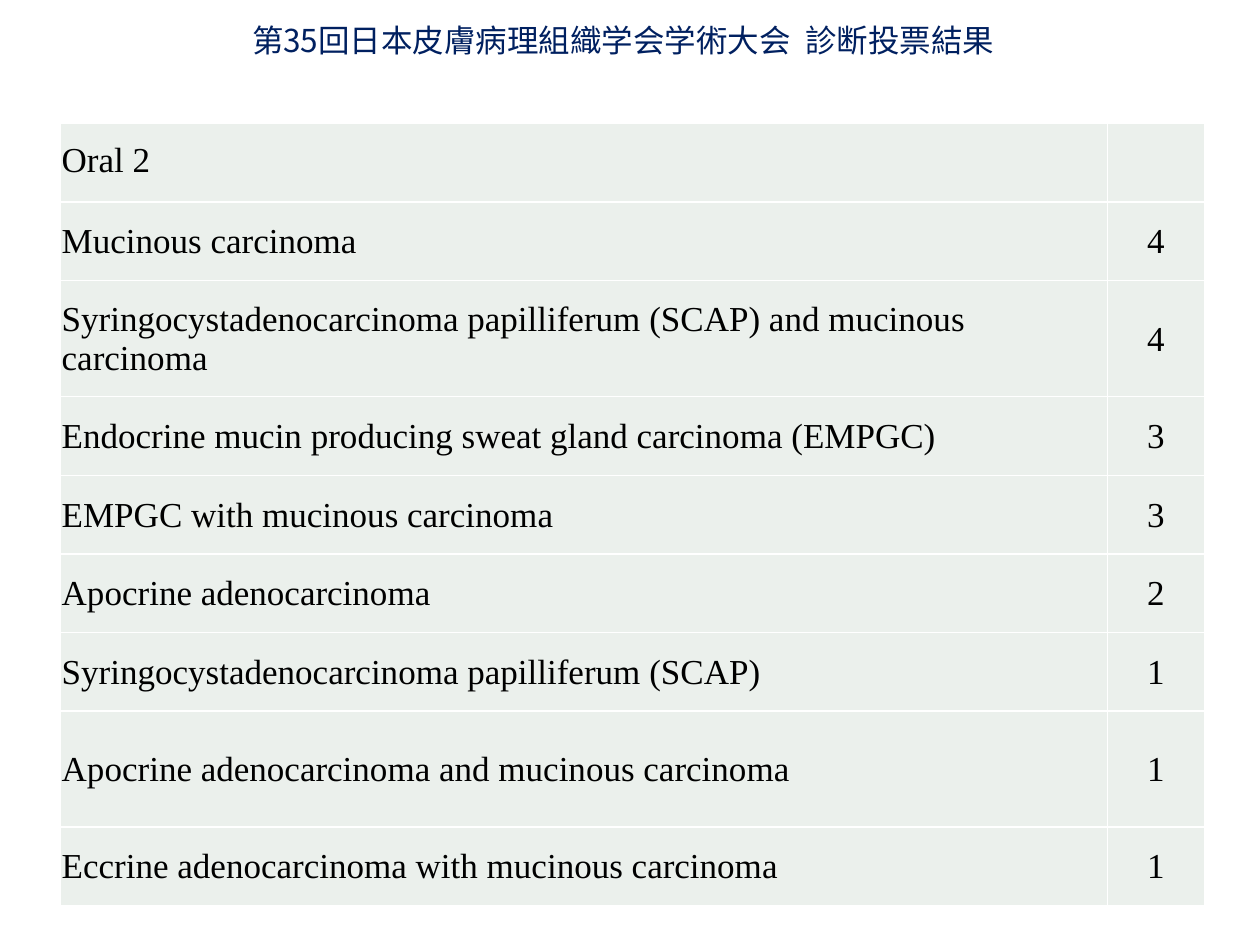
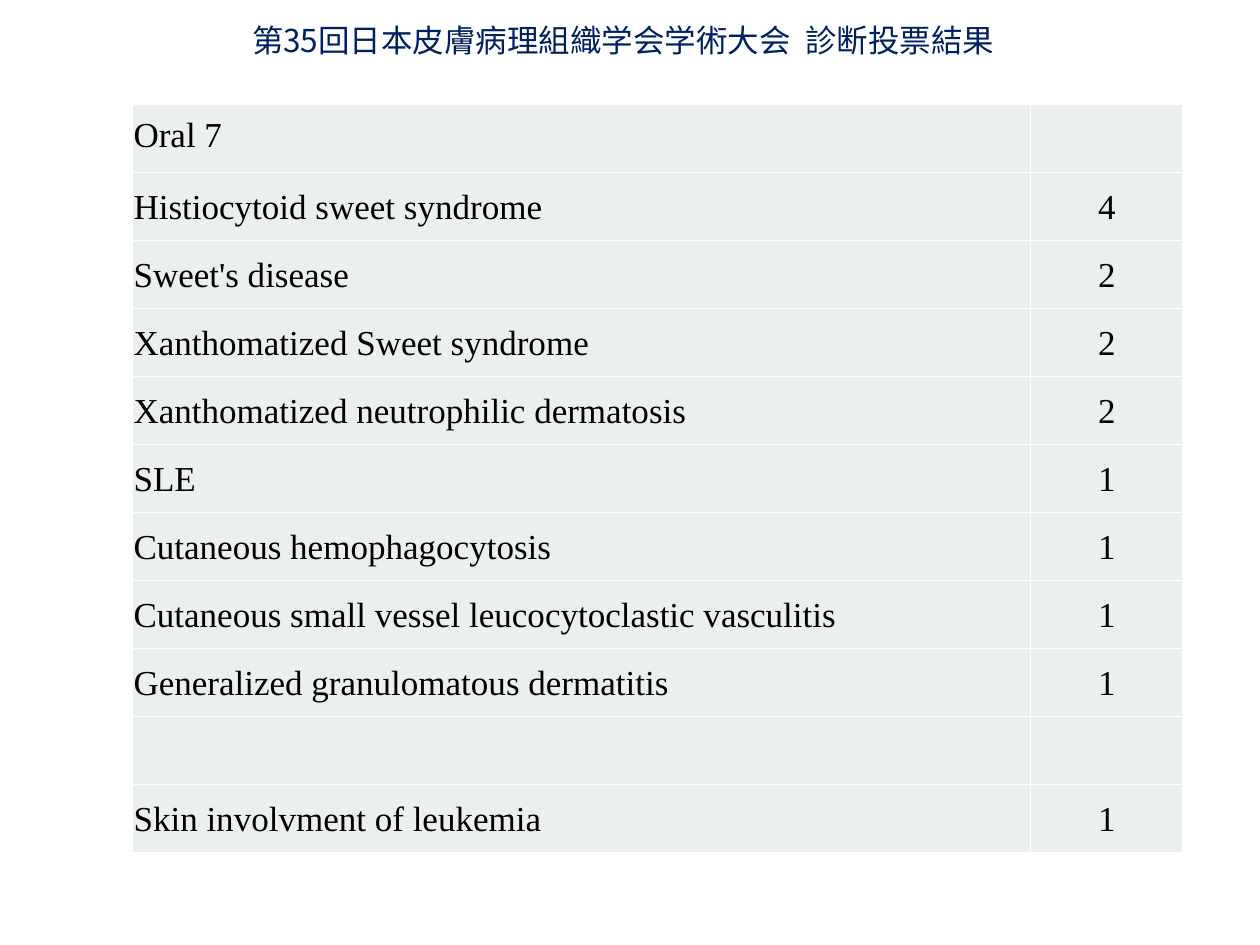
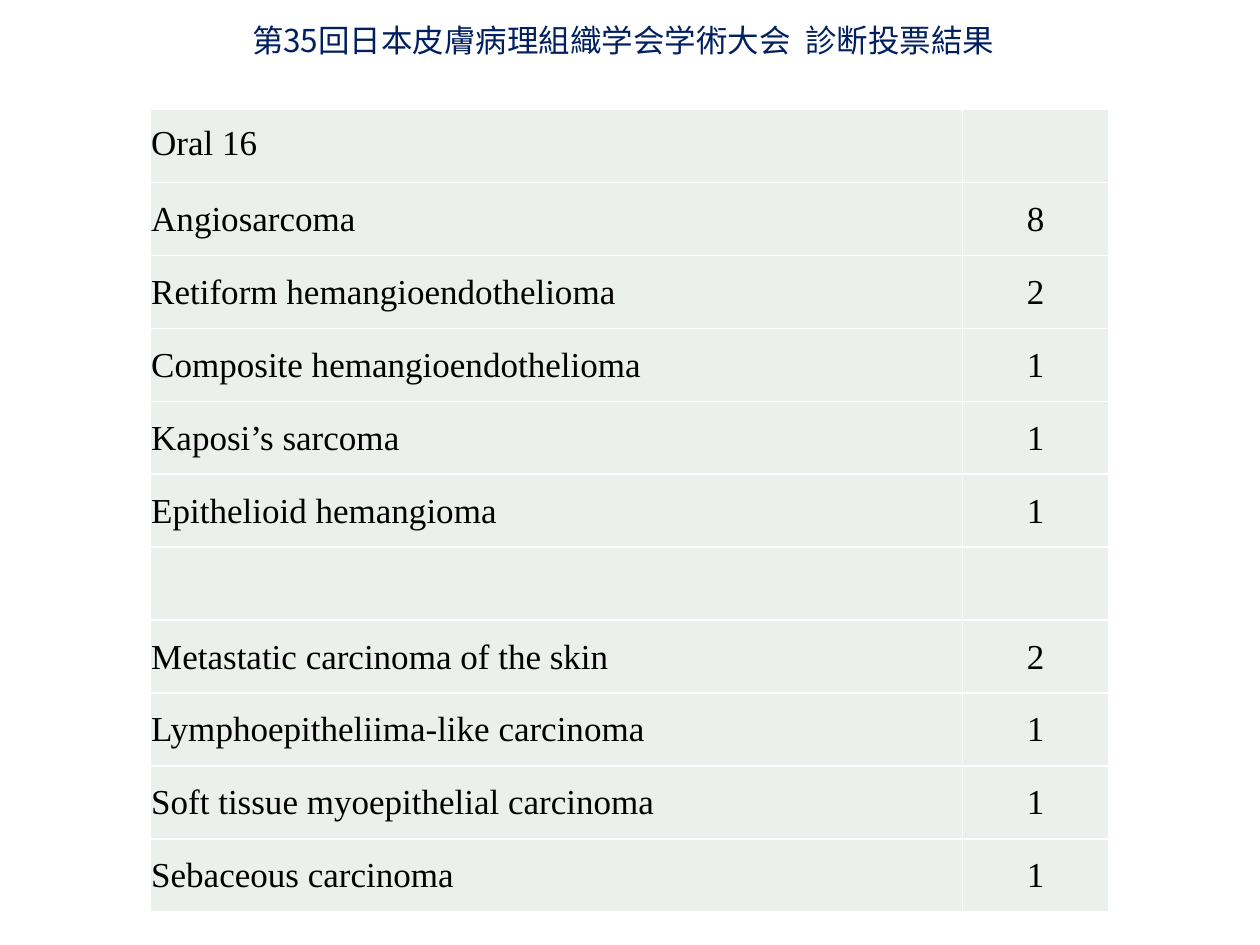
import dataclasses
import pptx
import pptx.dml.color
import pptx.enum.text
import pptx.oxml
import pptx.oxml.ns
import pptx.presentation
import pptx.slide
import pptx.table
import pptx.util

# Shared style
NAVY = pptx.dml.color.RGBColor(0x00, 0x20, 0x60)
BLACK = pptx.dml.color.RGBColor(0x00, 0x00, 0x00)
PALE = pptx.dml.color.RGBColor(0xEB, 0xF0, 0xEC)
WHITE = pptx.dml.color.RGBColor(0xFF, 0xFF, 0xFF)
HEAD_FONT = "Noto Sans CJK JP"
BODY_FONT = "Times New Roman"
HEADING = "第35回日本皮膚病理組織学会学術大会  診断投票結果"

# Square grid: 100 columns by 75 rows
WIDTH = pptx.util.Inches(10)
HEIGHT = pptx.util.Inches(7.5)
UNIT = WIDTH / 100
TALL = 1.48  # height of a tall row, in plain rows


@dataclasses.dataclass(frozen=True)
class Vote:
    name: str = ""
    count: str = ""
    size: float = 1


@dataclasses.dataclass(frozen=True)
class Poll:
    left: float
    top: float
    cols: tuple[float, float]
    height: float
    votes: tuple[Vote, ...]


POLLS = (
    Poll(4.8, 9.8, (83.1, 7.7), 62.1, (
        Vote("Oral 2"),
        Vote("Mucinous carcinoma", "4"),
        Vote("Syringocystadenocarcinoma papilliferum (SCAP) and mucinous carcinoma", "4", TALL),
        Vote("Endocrine mucin producing sweat gland carcinoma (EMPGC)", "3"),
        Vote("EMPGC with mucinous carcinoma", "3"),
        Vote("Apocrine adenocarcinoma", "2"),
        Vote("Syringocystadenocarcinoma papilliferum (SCAP)", "1"),
        Vote("Apocrine adenocarcinoma and mucinous carcinoma", "1", TALL),
        Vote("Eccrine adenocarcinoma with mucinous carcinoma", "1"),
    )),
    Poll(10.5, 8.3, (71.3, 12.1), 59.4, (
        Vote("Oral 7"),
        Vote("Histiocytoid sweet syndrome", "4"),
        Vote("Sweet's disease", "2"),
        Vote("Xanthomatized Sweet syndrome", "2"),
        Vote("Xanthomatized neutrophilic dermatosis", "2"),
        Vote("SLE", "1"),
        Vote("Cutaneous hemophagocytosis", "1"),
        Vote("Cutaneous small vessel leucocytoclastic vasculitis", "1"),
        Vote("Generalized granulomatous dermatitis", "1"),
        Vote(),
        Vote("Skin involvment of leukemia", "1"),
    )),
    Poll(11.9, 8.7, (64.5, 11.6), 63.7, (
        Vote("Oral 16"),
        Vote("Angiosarcoma", "8"),
        Vote("Retiform hemangioendothelioma", "2"),
        Vote("Composite hemangioendothelioma", "1"),
        Vote("Kaposi’s sarcoma", "1"),
        Vote("Epithelioid hemangioma", "1"),
        Vote(),
        Vote("Metastatic carcinoma of the skin", "2"),
        Vote("Lymphoepitheliima-like carcinoma", "1"),
        Vote("Soft tissue myoepithelial carcinoma", "1"),
        Vote("Sebaceous carcinoma", "1"),
    )),
)


def span(cells: float) -> pptx.util.Emu:
    """Turn grid cells into a length."""
    return pptx.util.Emu(round(cells * UNIT))


def add_title(slide: pptx.slide.Slide) -> None:
    title = slide.shapes.title
    title.left, title.top, title.width, title.height = map(span, (19, 1.2, 62, 4))
    frame = title.text_frame
    frame.text = HEADING
    frame.word_wrap = True
    frame.auto_size = pptx.enum.text.MSO_AUTO_SIZE.SHAPE_TO_FIT_TEXT
    frame.vertical_anchor = pptx.enum.text.MSO_ANCHOR.TOP
    para = frame.paragraphs[0]
    para.alignment = pptx.enum.text.PP_ALIGN.LEFT
    para.font.size = pptx.util.Pt(18)
    para.font.name = HEAD_FONT
    para.font.color.rgb = NAVY
    # East Asian glyphs need their own typeface entry
    props = para.runs[0]._r.get_or_add_rPr()
    face = pptx.oxml.parse_xml(
        f'<a:ea {pptx.oxml.ns.nsdecls("a")} typeface="{HEAD_FONT}"/>')
    props.append(face)


def add_edges(cell: pptx.table._Cell) -> None:
    """Draw white lines on all four sides; they go before the fill."""
    props = cell._tc.get_or_add_tcPr()
    for place, side in enumerate(("lnL", "lnR", "lnT", "lnB")):
        props.insert(place, pptx.oxml.parse_xml(
            f'<a:{side} {pptx.oxml.ns.nsdecls("a")} w="{pptx.util.Pt(1)}">'
            f'<a:solidFill><a:srgbClr val="{WHITE}"/></a:solidFill></a:{side}>'))


def fill_cell(cell: pptx.table._Cell, text: str, align: pptx.enum.text.PP_ALIGN,
              foot: float) -> None:
    cell.fill.solid()
    cell.fill.fore_color.rgb = PALE
    add_edges(cell)
    if not text:
        return
    cell.text = text
    cell.vertical_anchor = pptx.enum.text.MSO_ANCHOR.MIDDLE
    cell.margin_left = cell.margin_right = cell.margin_top = span(0.1)
    cell.margin_bottom = span(foot)
    para = cell.text_frame.paragraphs[0]
    para.alignment = align
    para.font.size = pptx.util.Pt(20)
    para.font.name = BODY_FONT
    para.font.color.rgb = BLACK


def add_poll(slide: pptx.slide.Slide, poll: Poll) -> None:
    frame = slide.shapes.add_table(
        len(poll.votes), len(poll.cols), span(poll.left), span(poll.top),
        span(sum(poll.cols)), span(poll.height))
    table = frame.table
    table.first_row = table.horz_banding = False
    for col, width in zip(table.columns, poll.cols):
        col.width = span(width)
    step = poll.height / sum(vote.size for vote in poll.votes)
    for index, vote in enumerate(poll.votes):
        table.rows[index].height = span(step * vote.size)
        foot = 0 if index else 0.5
        fill_cell(table.cell(index, 0), vote.name, pptx.enum.text.PP_ALIGN.LEFT, foot)
        fill_cell(table.cell(index, 1), vote.count, pptx.enum.text.PP_ALIGN.CENTER, foot)


def main() -> None:
    deck = pptx.Presentation()
    deck.slide_width, deck.slide_height = WIDTH, HEIGHT
    layout = deck.slide_layouts.get_by_name("Title Only")
    for poll in POLLS:
        slide = deck.slides.add_slide(layout)
        add_title(slide)
        add_poll(slide, poll)
    deck.save("out.pptx")


if __name__ == "__main__":
    main()
